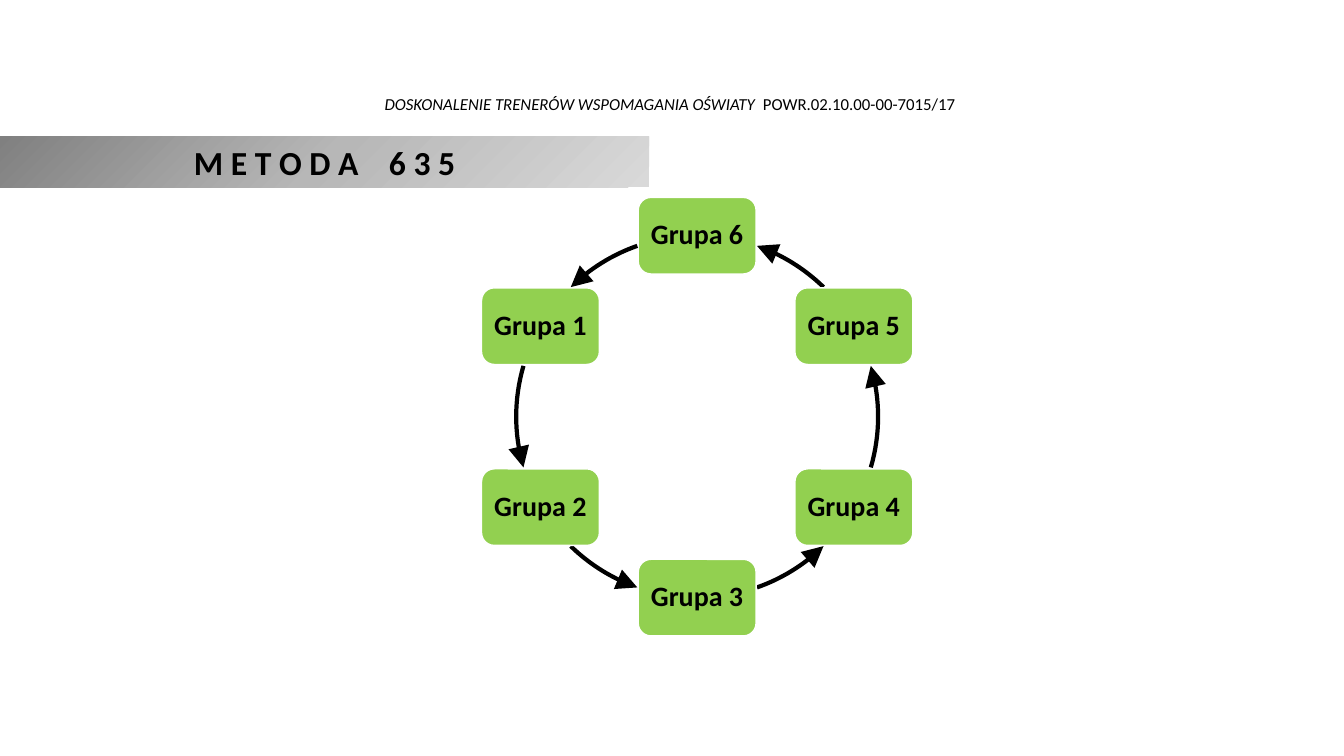
from dataclasses import dataclass
from math import cos, radians, sin

from lxml.etree import SubElement
from pptx import Presentation
from pptx.dml.color import RGBColor
from pptx.enum.shapes import MSO_SHAPE
from pptx.enum.text import MSO_ANCHOR, PP_ALIGN
from pptx.oxml import parse_xml
from pptx.oxml.ns import nsdecls, qn
from pptx.shapes.autoshape import Shape
from pptx.shapes.shapetree import GroupShapes
from pptx.text.text import _Paragraph as Paragraph
from pptx.util import Cm, Pt


@dataclass(frozen=True)
class Theme:
    font: str = "Calibri"
    ink: RGBColor = RGBColor(0x00, 0x00, 0x00)
    paper: RGBColor = RGBColor(0xFF, 0xFF, 0xFF)
    green: RGBColor = RGBColor(0x92, 0xD0, 0x50)
    greys: tuple[tuple[int, str], ...] = ((0, "808080"), (50, "B7B7B7"), (100, "D9D9D9"))
    header_size: float = 12
    title_size: float = 24
    group_size: float = 20


@dataclass(frozen=True)
class Span:
    text: str
    bold: bool = False
    italic: bool = False
    spacing: float = 0  # extra points after each character


@dataclass(frozen=True)
class Group:
    name: str
    angle: float  # degrees clockwise from the top of the ring


@dataclass(frozen=True)
class Arc:
    tip: float
    tail: float


THEME = Theme()
CENTRE_X, CENTRE_Y, RADIUS = 17.57, 10.5, 4.56
BOX_WIDTH, BOX_HEIGHT = 2.97, 1.93
ARC_STEPS = 16

HEADER = [
    Span("DOSKONALENIE TRENERÓW WSPOMAGANIA OŚWIATY", italic=True),
    Span(" ", italic=True, spacing=2.7),
    Span("POWR.02.10.00-00-7015/17"),
]
TITLE = [Span("M E T O D A", bold=True), Span(" ", bold=True, spacing=16.3), Span("6 3 5", bold=True)]
GROUPS = [Group(f"Grupa {6 - step}", 60 * step) for step in range(6)]
# The lower half of the ring repeats the upper half, turned by 180 degrees
ARCS = [
    Arc(tip + turn, tail + turn)
    for turn in (0, 180)
    for tip, tail in ((19.3, 44.3), (73.7, 106.3), (135.7, 160.7))
]


def ring_point(angle: float) -> tuple[int, int]:
    turn = radians(angle)
    return Cm(CENTRE_X + RADIUS * sin(turn)), Cm(CENTRE_Y - RADIUS * cos(turn))


def write(para: Paragraph, spans: list[Span], size: float) -> None:
    para.alignment = PP_ALIGN.CENTER
    for span in spans:
        run = para.add_run()
        run.text = span.text
        run.font.name = THEME.font
        run.font.size = Pt(size)
        run.font.bold = span.bold
        run.font.italic = span.italic
        run.font.color.rgb = THEME.ink
        if span.spacing:
            run.font._element.set("spc", str(round(span.spacing * 100)))


def fill_from_corner(shape: Shape) -> None:
    stops = "".join(
        f'<a:gs pos="{place * 1000}"><a:srgbClr val="{colour}"/></a:gs>'
        for place, colour in THEME.greys
    )
    gradient = parse_xml(
        f'<a:gradFill {nsdecls("a")} rotWithShape="1"><a:gsLst>{stops}</a:gsLst>'
        '<a:path path="circle"><a:fillToRect r="100000" b="100000"/></a:path>'
        '<a:tileRect l="-100000" t="-100000"/></a:gradFill>'
    )
    shape.element.spPr.find(qn("a:prstGeom")).addnext(gradient)


def draw_group(shapes: GroupShapes, group: Group) -> None:
    x, y = ring_point(group.angle)
    width, height = Cm(BOX_WIDTH), Cm(BOX_HEIGHT)
    box = shapes.add_shape(
        MSO_SHAPE.ROUNDED_RECTANGLE, x - width // 2, y - height // 2, width, height
    )
    box.shadow.inherit = False
    box.fill.solid()
    box.fill.fore_color.rgb = THEME.green
    box.line.color.rgb = THEME.paper
    box.line.width = Pt(1)
    frame = box.text_frame
    frame.word_wrap = False
    frame.vertical_anchor = MSO_ANCHOR.MIDDLE
    para = frame.paragraphs[0]
    para.line_spacing = 0.9
    write(para, [Span(group.name, bold=True)], THEME.group_size)


def draw_arc(shapes: GroupShapes, arc: Arc) -> None:
    step = (arc.tail - arc.tip) / ARC_STEPS
    points = [ring_point(arc.tip + step * index) for index in range(ARC_STEPS + 1)]
    builder = shapes.build_freeform(*points[0])
    builder.add_line_segments(points[1:], close=False)
    # Corner moves stretch the frame to the whole ring, then leave the outline
    for side in (-RADIUS, RADIUS):
        builder.move_to(Cm(CENTRE_X + side), Cm(CENTRE_Y + side))
    arrow = builder.convert_to_shape()
    for corner in list(arrow.element.iter(qn("a:moveTo")))[1:]:
        corner.getparent().remove(corner)
    arrow.shadow.inherit = False
    arrow.fill.background()
    arrow.line.color.rgb = THEME.ink
    arrow.line.width = Pt(3)
    outline = arrow.element.spPr.find(qn("a:ln"))
    SubElement(outline, qn("a:headEnd"), type="triangle", w="lg", len="lg")


def main() -> None:
    deck = Presentation()
    deck.slide_width, deck.slide_height = Cm(33.87), Cm(19.05)
    page = deck.slides.add_slide(deck.slide_layouts[6])

    # Project line
    header = page.shapes.add_textbox(Cm(2.33), Cm(0), Cm(29.11), Cm(3.1)).text_frame
    header.word_wrap = True
    header.vertical_anchor = MSO_ANCHOR.BOTTOM
    header.margin_bottom = Cm(0.22)
    header.paragraphs[0].line_spacing = 0.9
    write(header.paragraphs[0], HEADER, THEME.header_size)

    # Ring of groups, passing work on counter-clockwise
    ring = page.shapes.add_group_shape()
    for group, arc in zip(GROUPS, ARCS):
        draw_group(ring.shapes, group)
        draw_arc(ring.shapes, arc)

    # Title band
    band = page.shapes.add_shape(MSO_SHAPE.RECTANGLE, Cm(0), Cm(3.44), Cm(16.36), Cm(1.28))
    band.shadow.inherit = False
    band.line.fill.background()
    fill_from_corner(band)
    band.text_frame.word_wrap = True
    band.text_frame.vertical_anchor = MSO_ANCHOR.MIDDLE
    write(band.text_frame.paragraphs[0], TITLE, THEME.title_size)

    deck.save("out.pptx")


if __name__ == "__main__":
    main()
